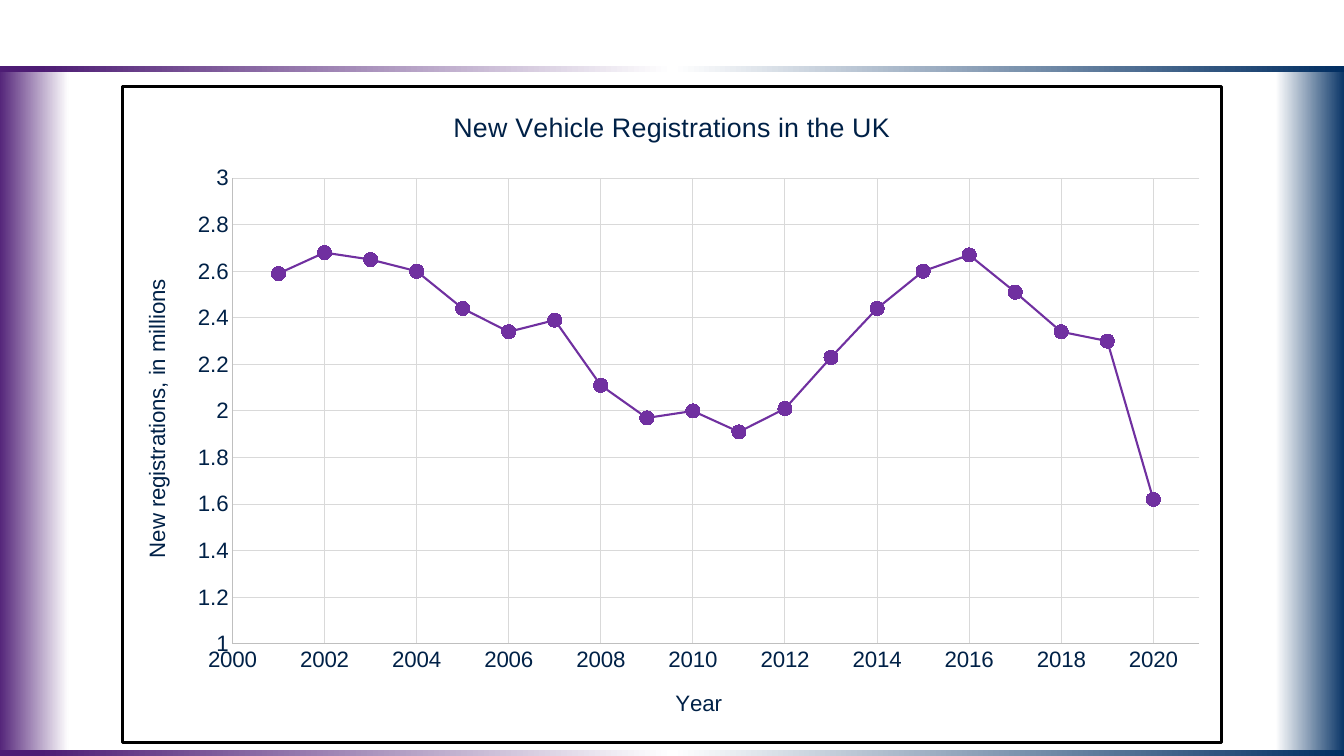
import pptx
import pptx.chart.data
import pptx.dml.color
import pptx.enum.chart
import pptx.enum.shapes
import pptx.oxml
import pptx.oxml.ns
import pptx.util
from pptx.util import Inches

PURPLE, NAVY, WHITE = "4D1C74", "002D61", "FFFFFF"
TEXT, GRID, AXIS, SERIES = "002147", "D9D9D9", "BFBFBF", "7030A0"
qn = pptx.oxml.ns.qn


def colour(hex_string):
    return pptx.dml.color.RGBColor.from_string(hex_string)


def xml(tag, content):
    return pptx.oxml.parse_xml(
        f'<{tag} {pptx.oxml.ns.nsdecls("a", "c")}>{content}</{tag}>')


class SlideBuilder:
    font_name = "Arial"
    text_size = 16

    def __init__(self, slide):
        self.slide = slide

    def gradient_band(self, left, top, width, height, stops):
        band = self.slide.shapes.add_shape(
            pptx.enum.shapes.MSO_SHAPE.RECTANGLE,
            Inches(left), Inches(top), Inches(width), Inches(height))
        band.shadow.inherit = False
        band.line.fill.background()
        band.fill.gradient()
        band.fill.gradient_angle = 0
        # Replace the default stops with those of the band
        stop_list = next(band._element.iter(qn("a:gsLst")))
        for old_stop in list(stop_list):
            stop_list.remove(old_stop)
        for percent, hex_string in stops:
            stop = xml("a:gs", f'<a:srgbClr val="{hex_string}"/>')
            stop.set("pos", str(percent * 1000))
            stop_list.append(stop)

    def style_line(self, line, hex_string, width):
        line.color.rgb = colour(hex_string)
        line.width = pptx.util.Pt(width)

    def chart_text(self, title, words, size):
        run = title.text_frame.paragraphs[0].add_run()
        run.text = words
        run.font.name = self.font_name
        run.font.size = pptx.util.Pt(size)
        run.font.bold = False
        run.font.color.rgb = colour(TEXT)

    def axis(self, axis, words, low, high, step):
        axis.minimum_scale, axis.maximum_scale = low, high
        axis.major_unit = step
        axis.has_major_gridlines = True
        self.style_line(axis.major_gridlines.format.line, GRID, 0.75)
        self.style_line(axis.format.line, AXIS, 0.75)
        axis.major_tick_mark = pptx.enum.chart.XL_TICK_MARK.NONE
        axis.minor_tick_mark = pptx.enum.chart.XL_TICK_MARK.NONE
        labels = axis.tick_labels
        labels.number_format = "General"
        labels.number_format_is_linked = False
        labels.font.name = self.font_name
        labels.font.size = pptx.util.Pt(self.text_size)
        labels.font.color.rgb = colour(TEXT)
        self.chart_text(axis.axis_title, words, self.text_size)

    def scatter_chart(self, left, top, width, height, data, title):
        chart = self.slide.shapes.add_chart(
            pptx.enum.chart.XL_CHART_TYPE.XY_SCATTER_LINES,
            Inches(left), Inches(top), Inches(width), Inches(height),
            data).chart
        chart.has_legend = False
        chart.font.name = self.font_name
        chart.font.size = pptx.util.Pt(self.text_size)
        chart.has_title = True
        self.chart_text(chart.chart_title, title, 19.2)
        chart.chart_title.include_in_layout = False
        chart.plots[0].vary_by_categories = False
        for series in chart.plots[0].series:
            series.smooth = False
            self.style_line(series.format.line, SERIES, 1.5)
            series.marker.style = pptx.enum.chart.XL_MARKER_STYLE.CIRCLE
            series.marker.size = 10
            series.marker.format.fill.solid()
            series.marker.format.fill.fore_color.rgb = colour(SERIES)
            self.style_line(series.marker.format.line, SERIES, 0.75)
        return chart

    def frame_chart(self, chart, hex_string, width):
        border = xml("c:spPr", (
            f'<a:solidFill><a:srgbClr val="{WHITE}"/></a:solidFill>'
            f'<a:ln w="{pptx.util.Pt(width)}"><a:solidFill>'
            f'<a:srgbClr val="{hex_string}"/></a:solidFill></a:ln>'))
        chart._chartSpace.find(qn("c:chart")).addnext(border)

    def place_plot(self, chart, **fractions):
        sizes = "".join(f'<c:{name} val="{value}"/>'
                        for name, value in fractions.items())
        layout = xml("c:layout", (
            '<c:manualLayout><c:layoutTarget val="inner"/>'
            f'<c:xMode val="edge"/><c:yMode val="edge"/>{sizes}'
            '</c:manualLayout>'))
        plot_area = next(chart._chartSpace.iter(qn("c:plotArea")))
        for old_layout in plot_area.findall(qn("c:layout")):
            plot_area.remove(old_layout)
        plot_area.insert(0, layout)


def main():
    presentation = pptx.Presentation()
    presentation.slide_width = Inches(13.33)
    presentation.slide_height = Inches(7.5)
    builder = SlideBuilder(
        presentation.slides.add_slide(presentation.slide_layouts[6]))

    # Coloured edges of the slide
    builder.gradient_band(-0.03, 0.67, 0.71, 6.82, [(0, PURPLE), (100, WHITE)])
    builder.gradient_band(12.65, 0.67, 0.71, 6.82, [(0, WHITE), (100, NAVY)])
    for top in (7.44, 0.66):
        builder.gradient_band(-0.01, top, 13.36, 0.06,
                              [(3, PURPLE), (50, WHITE), (100, NAVY)])

    # Registrations per year, in millions
    registrations = [2.59, 2.68, 2.65, 2.6, 2.44, 2.34, 2.39, 2.11, 1.97, 2,
                     1.91, 2.01, 2.23, 2.44, 2.6, 2.67, 2.51, 2.34, 2.3, 1.62]
    data = pptx.chart.data.XyChartData()
    yearly = data.add_series("Series 1")
    for year, millions in enumerate(registrations, start=2001):
        yearly.add_data_point(year, millions)

    # Chart with its axes and frame
    chart = builder.scatter_chart(1.2, 0.84, 10.93, 6.54, data,
                                  "New Vehicle Registrations in the UK")
    builder.axis(chart.category_axis, "Year", 2000, 2021, 2)
    builder.axis(chart.value_axis, "New registrations, in millions", 1, 3, 0.2)
    builder.place_plot(chart, x=0.1, y=0.14, w=0.88, h=0.71)
    builder.frame_chart(chart, "000000", 2.25)

    presentation.save("out.pptx")


if __name__ == "__main__":
    main()
